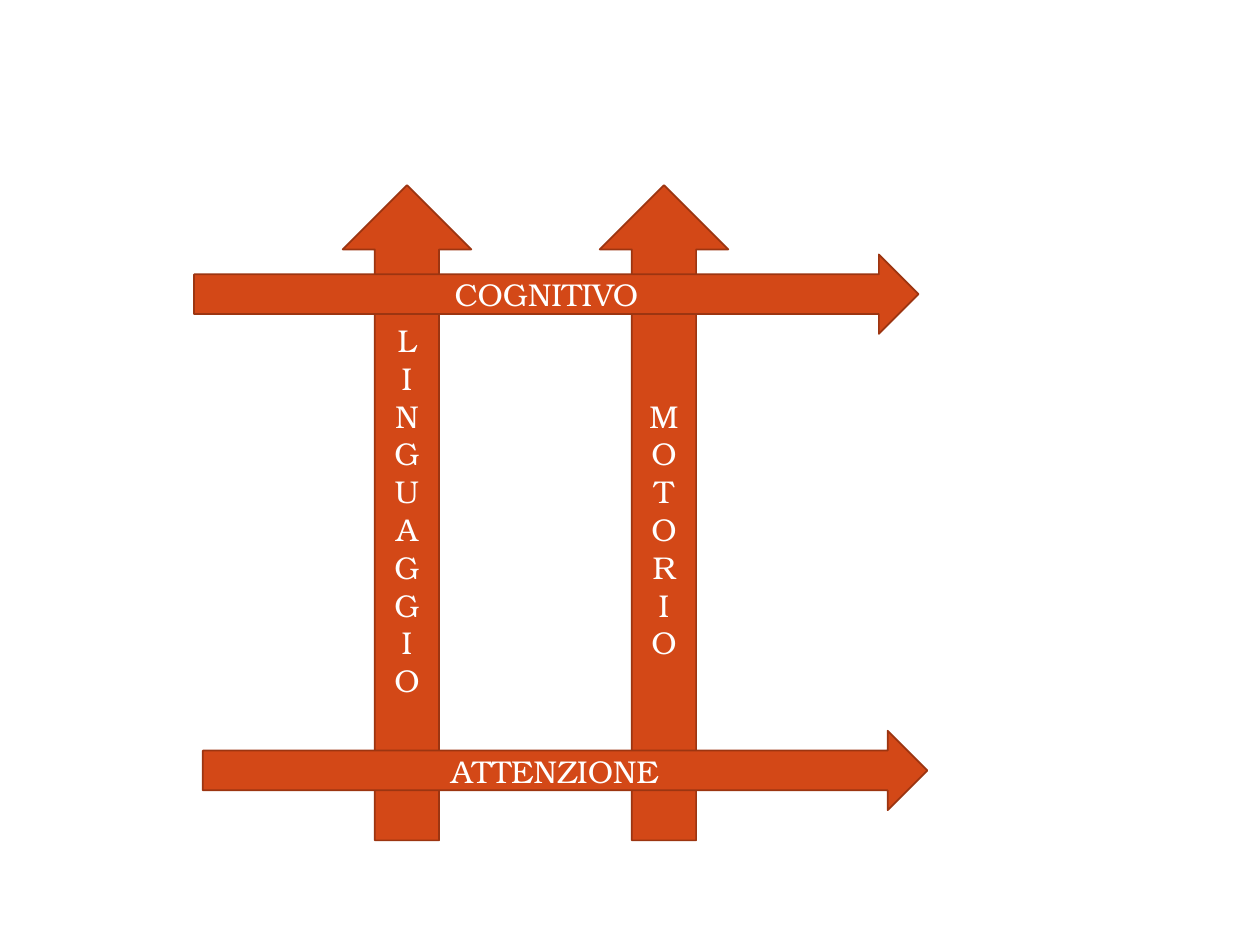
from pptx import Presentation
from pptx.dml.color import RGBColor
from pptx.enum.shapes import MSO_SHAPE
from pptx.enum.text import MSO_ANCHOR, PP_ALIGN
from pptx.util import Inches, Pt

UP = MSO_SHAPE.UP_ARROW
RIGHT = MSO_SHAPE.RIGHT_ARROW
MIDDLE = MSO_ANCHOR.MIDDLE
CENTER = PP_ALIGN.CENTER
FONT = "TeX Gyre Bonum"
COLORS = {"fill": "D34817", "line": "9C3511", "text": "FFFFFF"}
UP_SIZE = (1.02, 5.2)
RIGHT_SIZE = (5.75, 0.63)

presentation = Presentation()
presentation.slide_width = Inches(10)
presentation.slide_height = Inches(7.5)
slide = presentation.slides.add_slide(presentation.slide_layouts[6])

arrows = [
    (UP, 2.72, 1.47, UP_SIZE, "\n".join("LINGUAGGIO"), 0.35),
    (UP, 4.76, 1.47, UP_SIZE, "\n".join("MOTORIO"), 0.05),
    (RIGHT, 1.61, 5.8, RIGHT_SIZE, "ATTENZIONE", 0.05),
    (RIGHT, 1.54, 2.02, RIGHT_SIZE, "COGNITIVO", 0.05),
]

for kind, left, top, (width, height), label, bottom_margin in arrows:
    arrow = slide.shapes.add_shape(
        kind, Inches(left), Inches(top), Inches(width), Inches(height)
    )
    arrow.shadow.inherit = False
    arrow.fill.solid()
    arrow.fill.fore_color.rgb = RGBColor.from_string(COLORS["fill"])
    arrow.line.color.rgb = RGBColor.from_string(COLORS["line"])
    arrow.line.width = Pt(1)

    text_frame = arrow.text_frame
    text_frame.word_wrap = True
    text_frame.vertical_anchor = MIDDLE
    text_frame.margin_bottom = Inches(bottom_margin)
    text_frame.text = label
    for paragraph in text_frame.paragraphs:
        paragraph.alignment = CENTER
        for run in paragraph.runs:
            run.font.name = FONT
            run.font.size = Pt(18)
            run.font.color.rgb = RGBColor.from_string(COLORS["text"])

presentation.save("out.pptx")
